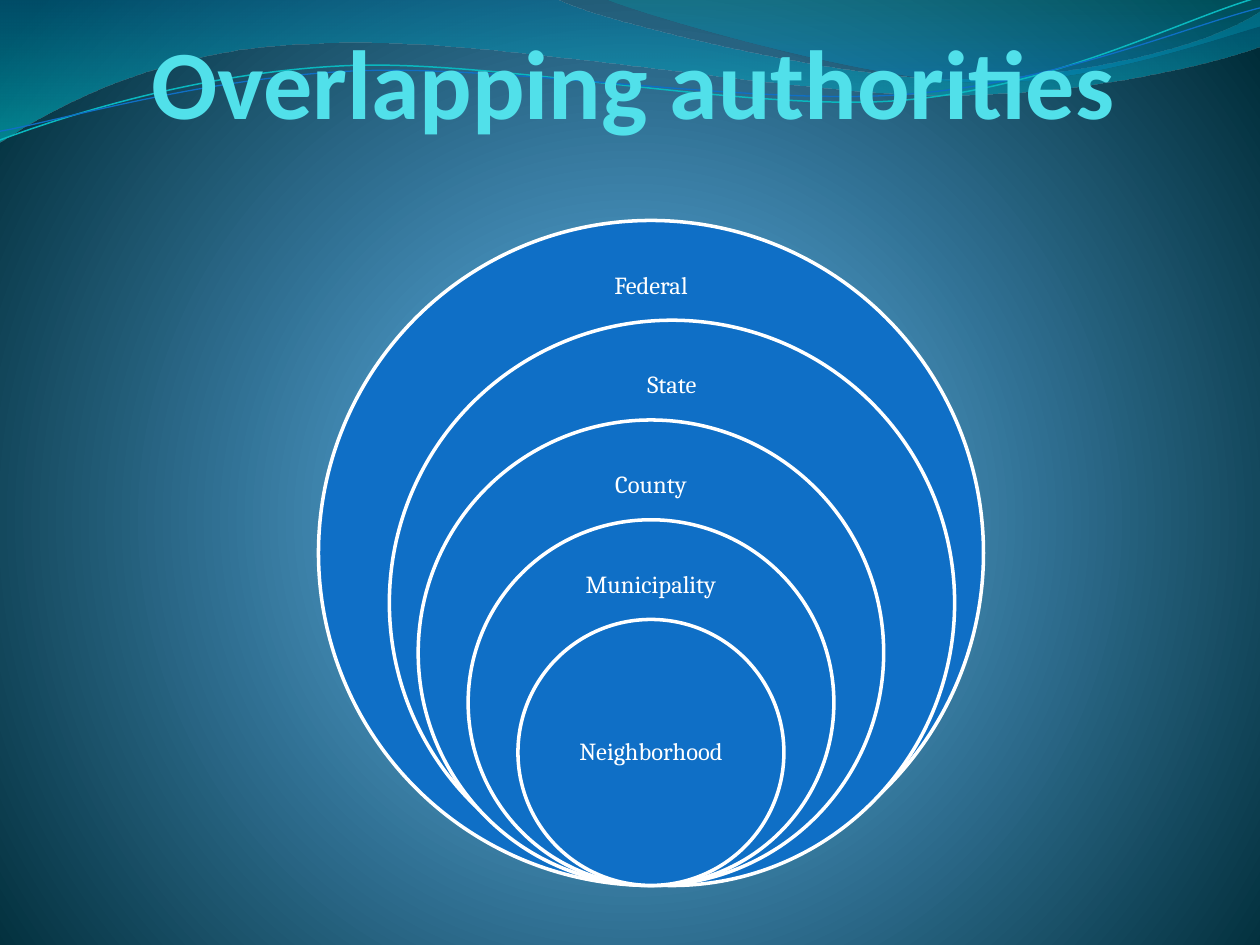
from lxml.etree import SubElement
from pptx import Presentation
from pptx.dml.color import RGBColor
from pptx.enum.shapes import MSO_SHAPE as Shape
from pptx.enum.text import MSO_ANCHOR as Anchor, PP_ALIGN as Align
from pptx.oxml import parse_xml
from pptx.oxml.ns import nsdecls, qn
from pptx.util import Pt

COLORS = {
    "glow": "4AA0D6", "sea": "4C98C7", "night": "002C38",
    "wave_blue": "0074A1", "wave_aqua": "00C6CF",
    "crest_teal": "00A1A9", "crest_blue": "008BBF",
    "thread": "0AB8BF", "circle": "0F6FC6", "title": "51E0EA", "white": "FFFFFF",
}
LINEAR_DOWN = '<a:lin {} ang="5400000" scaled="0"/>'
RADIAL = ('<a:path {} path="circle">'
          '<a:fillToRect l="10000" t="110000" r="10000" b="100000"/></a:path>')

WAVE = [(0, 0), (317, -1), (343, 12, 478, 45, 546, 45), (614, 45, 690, 27, 720, 6.5),
        (721, 26), (708, 32, 626, 55, 537, 54), (448, 54, 275, 20, 185, 24.5),
        (93, 26, 33, 60, -1, 81.5)]
CREST = [(345, -1), (366, 8, 491, 45, 554, 47), (616, 50, 692, 23, 720, 15), (720, 0)]
UPPER_THREAD = [(0, 80), (35, 67, 114, 41, 199, 37.5), (284, 34, 427, 64, 513, 57.5),
                (600, 51, 675, 11, 719, -1.5)]
LOWER_THREAD = [(0, 75), (34, 69, 118, 44, 204, 40.5), (290, 37, 430, 60.5, 516, 54),
                (602, 48, 678, 15, 720, 4.5)]


def write(frame, text, size, font, color, bold=False, anchor=Anchor.TOP,
          margins=(0, 0, 0, 0), spacing=1.0):
    """Put one centred, formatted paragraph into a text frame."""
    frame.word_wrap = True
    frame.vertical_anchor = anchor
    (frame.margin_left, frame.margin_top,
     frame.margin_right, frame.margin_bottom) = [Pt(m) for m in margins]
    paragraph = frame.paragraphs[0]
    paragraph.alignment = Align.CENTER
    paragraph.line_spacing = spacing
    run = paragraph.add_run()
    run.text = text
    run.font.size, run.font.name, run.font.bold = Pt(size), font, bold
    run.font.color.rgb = RGBColor.from_string(COLORS[color])


class Deck:
    """Hold the style and the current slide, and draw each kind of element."""

    def __init__(self, width, height):
        """Start a presentation with one blank slide."""
        self.presentation = Presentation()
        self.presentation.slide_width = Pt(width)
        self.presentation.slide_height = Pt(height)
        self.slide = self.presentation.slides.add_slide(self.presentation.slide_layouts[6])

    def gradient(self, fill, holder, stops, direction):
        """Fill with (position, colour, opacity) stops."""
        fill.gradient()
        gradient = next(holder.iter(qn("a:gradFill")))
        gradient.clear()
        marks = "".join(
            f'<a:gs pos="{position * 1000}"><a:srgbClr val="{COLORS[color]}">'
            f'<a:alpha val="{opacity * 1000}"/></a:srgbClr></a:gs>'
            for position, color, opacity in stops)
        gradient.append(parse_xml(f'<a:gsLst {nsdecls("a")}>{marks}</a:gsLst>'))
        gradient.append(parse_xml(direction.format(nsdecls("a"))))

    def background(self, stops):
        """Give the slide a radial background."""
        self.gradient(self.slide.background.fill, self.slide.element, stops, RADIAL)

    def outline(self, shape, color, width):
        """Set the line of a shape."""
        shape.line.color.rgb = RGBColor.from_string(COLORS[color])
        shape.line.width = Pt(width)

    def curve(self, steps, close):
        """Build a freeform, turning each six-number step into a Bezier segment."""
        start, *rest = [(Pt(step[i]), Pt(step[i + 1]))
                        for step in steps for i in range(0, len(step), 2)]
        builder = self.slide.shapes.build_freeform(*start)
        builder.add_line_segments(rest, close=close)
        shape = builder.convert_to_shape()
        shape.shadow.inherit = False
        lines = iter(list(shape.element.iter(qn("a:lnTo"))))
        for step in steps[1:]:
            segment = [next(lines) for _ in range(len(step) // 2)]
            if len(segment) == 3:
                outline = segment[0].getparent()
                bezier = SubElement(outline, qn("a:cubicBezTo"))
                segment[0].addprevious(bezier)
                for line in segment:
                    bezier.append(line[0])
                    outline.remove(line)
        return shape

    def wave(self, steps, stops):
        """Draw a filled wave."""
        shape = self.curve(steps, close=True)
        self.gradient(shape.fill, shape.element, stops, LINEAR_DOWN)
        shape.line.fill.background()

    def thread(self, steps, color, width):
        """Draw a thin curved line."""
        shape = self.curve(steps, close=False)
        shape.fill.background()
        self.outline(shape, color, width)

    def circle(self, center, top, diameter):
        """Draw one authority circle."""
        shape = self.slide.shapes.add_shape(
            Shape.OVAL, Pt(center - diameter / 2), Pt(top), Pt(diameter), Pt(diameter))
        shape.shadow.inherit = False
        shape.fill.solid()
        shape.fill.fore_color.rgb = RGBColor.from_string(COLORS["circle"])
        self.outline(shape, "white", 2)

    def text(self, words, left, top, width, height, **style):
        """Add a text box."""
        box = self.slide.shapes.add_textbox(Pt(left), Pt(top), Pt(width), Pt(height))
        write(box.text_frame, words, **style)


def main():
    """Build the slide."""
    deck = Deck(720, 540)
    deck.background([(0, "glow", 100), (25, "sea", 100), (100, "night", 100)])
    deck.wave(WAVE, [(0, "wave_blue", 45), (100, "wave_aqua", 55)])
    deck.wave(CREST, [(0, "crest_teal", 30), (80, "crest_blue", 45)])
    deck.thread(UPPER_THREAD, "thread", 0.85)
    deck.thread(LOWER_THREAD, "circle", 0.75)
    deck.text("Overlapping authorities", 53.5, 12.5, 618.5, 144, size=56, font="Calibri",
              color="title", bold=True, margins=(0, 0, 1.5, 0))

    bottom, largest, step = 506, 380, 57
    authorities = [("Federal", 372, 142, 19, 38), ("State", 384, 139, 19, 37),
                   ("County", 372, 138, 19, 36.5), ("Municipality", 372, 113, 19, 37.5),
                   ("Neighborhood", 372, 107, 38, 76)]
    for level, (authority, center, width, drop, height) in enumerate(authorities):
        diameter = largest - level * step
        top = bottom - diameter
        deck.circle(center, top, diameter)
        deck.text(authority, center - width / 2, top + drop, width, height,
                  size=14, font="Cambria", color="white", anchor=Anchor.MIDDLE,
                  margins=(8, 8, 8, 8), spacing=0.9)
    deck.presentation.save("out.pptx")


if __name__ == "__main__":
    main()
